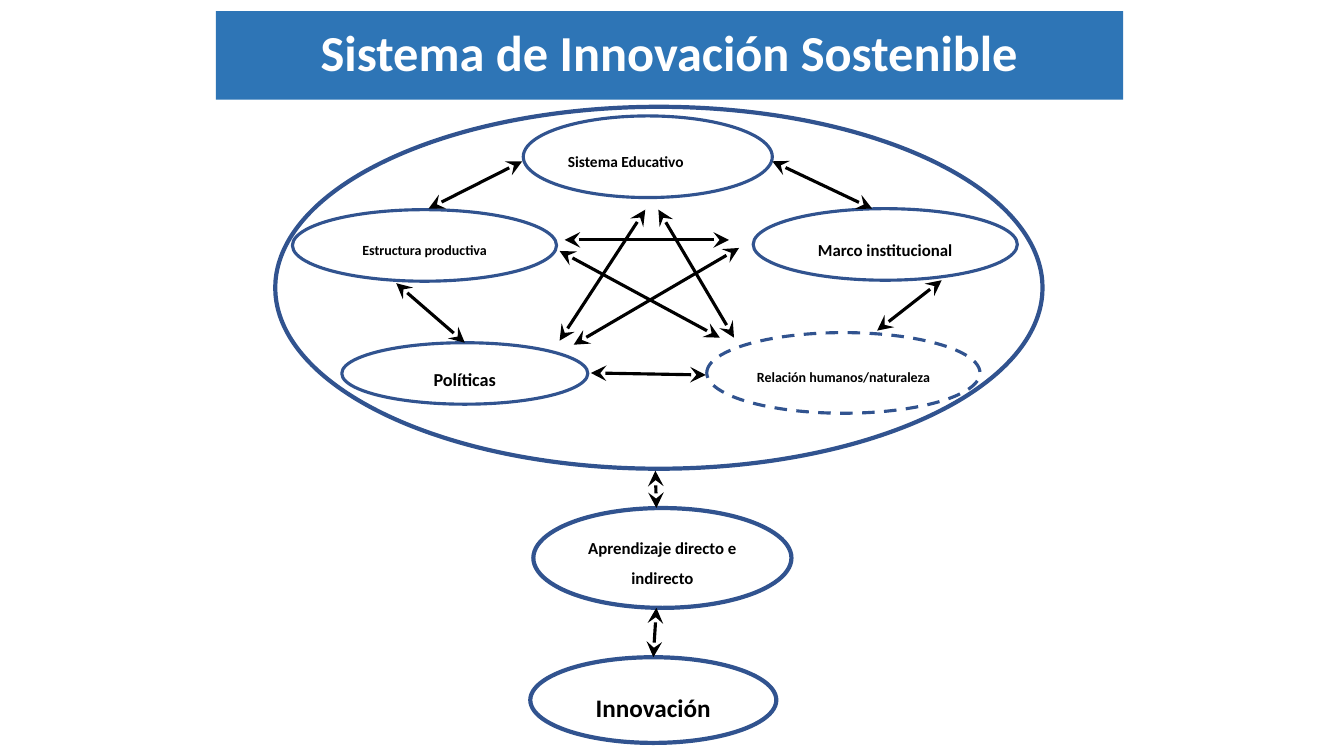
from lxml import etree
from pptx import Presentation
from pptx import util as u
from pptx.dml.color import RGBColor
from pptx.enum import dml, shapes, text
from pptx.oxml.ns import qn

HUES = {"band": "2E75B6", "edge": "31538F", "ink": "000000", "paper": "FFFFFF"}

prs = Presentation()
prs.slide_width, prs.slide_height = u.Inches(13.33), u.Inches(7.5)
col, row = prs.slide_width / 13.33, prs.slide_height / 7.5
slide = prs.slides.add_slide(prs.slide_layouts[5])


def hue(name):
    return RGBColor.from_string(HUES[name])


def write(shape, words, size, ink, space, align):
    """Put one bold paragraph in the middle of a shape."""
    frame = shape.text_frame
    frame.text = words
    frame.word_wrap = True
    frame.vertical_anchor = text.MSO_ANCHOR.MIDDLE
    para = frame.paragraphs[0]
    para.alignment, para.line_spacing = align, space
    font = para.runs[0].font
    font.name, font.size, font.bold = "Calibri", u.Pt(size), True
    font.color.rgb = hue(ink)


mid, left = text.PP_ALIGN.CENTER, text.PP_ALIGN.LEFT

title = slide.shapes.title
title.left, title.top = int(2.14 * col), int(0.11 * row)
title.width, title.height = int(9 * col), int(0.88 * row)
title.fill.solid()
title.fill.fore_color.rgb = hue("band")
write(title, "Sistema de Innovación Sostenible", 36, "paper", 0.9, mid)

# column, row, columns wide, rows high, line width, words, text size, alignment
ovals = [
    (2.73, 1.06, 7.61, 3.59, 3, "", 0, mid),
    (5.19, 1.15, 2.47, 0.81, 2.25, "Sistema Educativo", 11, left),
    (7.47, 2.07, 2.62, 0.71, 2.25, "Marco institucional", 12, mid),
    (7.01, 3.3, 2.71, 0.8, 2.25, "Relación humanos/naturaleza", 10, mid),
    (2.9, 2.08, 2.62, 0.71, 2.25, "Estructura productiva", 10, mid),
    (3.39, 3.4, 2.44, 0.61, 2.25, "Políticas", 13, mid),
    (5.29, 5.04, 2.56, 0.99, 3, "Aprendizaje directo e indirecto", 12, mid),
    (5.26, 6.52, 2.44, 0.85, 3, "Innovación", 18, mid),
]
for x, y, wide, high, weight, words, size, align in ovals:
    oval = slide.shapes.add_shape(
        shapes.MSO_SHAPE.OVAL,
        int(x * col), int(y * row), int(wide * col), int(high * row))
    oval.shadow.inherit = False
    oval.fill.background()
    oval.line.color.rgb = hue("edge")
    oval.line.width = u.Pt(weight)
    if words.startswith("Relación"):
        oval.line.dash_style = dml.MSO_LINE.DASH
    if words:
        frame = oval.text_frame
        frame.margin_left = frame.margin_right = int(0.08 * col)
        frame.margin_top = frame.margin_bottom = int(0.04 * row)
        write(oval, words, size, "ink", 1.5, align)

# start column and row, end column and row
arrows = [
    # around the ring
    (3.93, 2.81, 4.61, 3.4),
    (9.34, 2.78, 8.7, 3.28),
    (7.66, 1.6, 8.65, 2.07),
    (5.18, 1.6, 4.25, 2.07),
    (7, 3.72, 5.86, 3.7),
    # across the star
    (6.4, 2.08, 5.55, 3.38),
    (6.53, 2.08, 7.28, 3.35),
    (7.14, 3.35, 5.55, 2.49),
    (7.33, 2.46, 5.69, 3.42),
    (7.23, 2.38, 5.6, 2.38),
    # down to innovation
    (6.5, 4.67, 6.51, 5.04),
    (6.51, 6.03, 6.48, 6.52),
]
for x1, y1, x2, y2 in arrows:
    arrow = slide.shapes.add_connector(
        shapes.MSO_CONNECTOR.STRAIGHT,
        int(x1 * col), int(y1 * row), int(x2 * col), int(y2 * row))
    arrow.line.color.rgb = hue("ink")
    arrow.line.width = u.Pt(2.25)
    props = arrow._element.spPr
    for end in ("a:headEnd", "a:tailEnd"):
        etree.SubElement(props.find(qn("a:ln")), qn(end),
                         type="stealth", w="lg", len="lg")
    etree.SubElement(props, qn("a:effectLst"))

prs.save("out.pptx")
